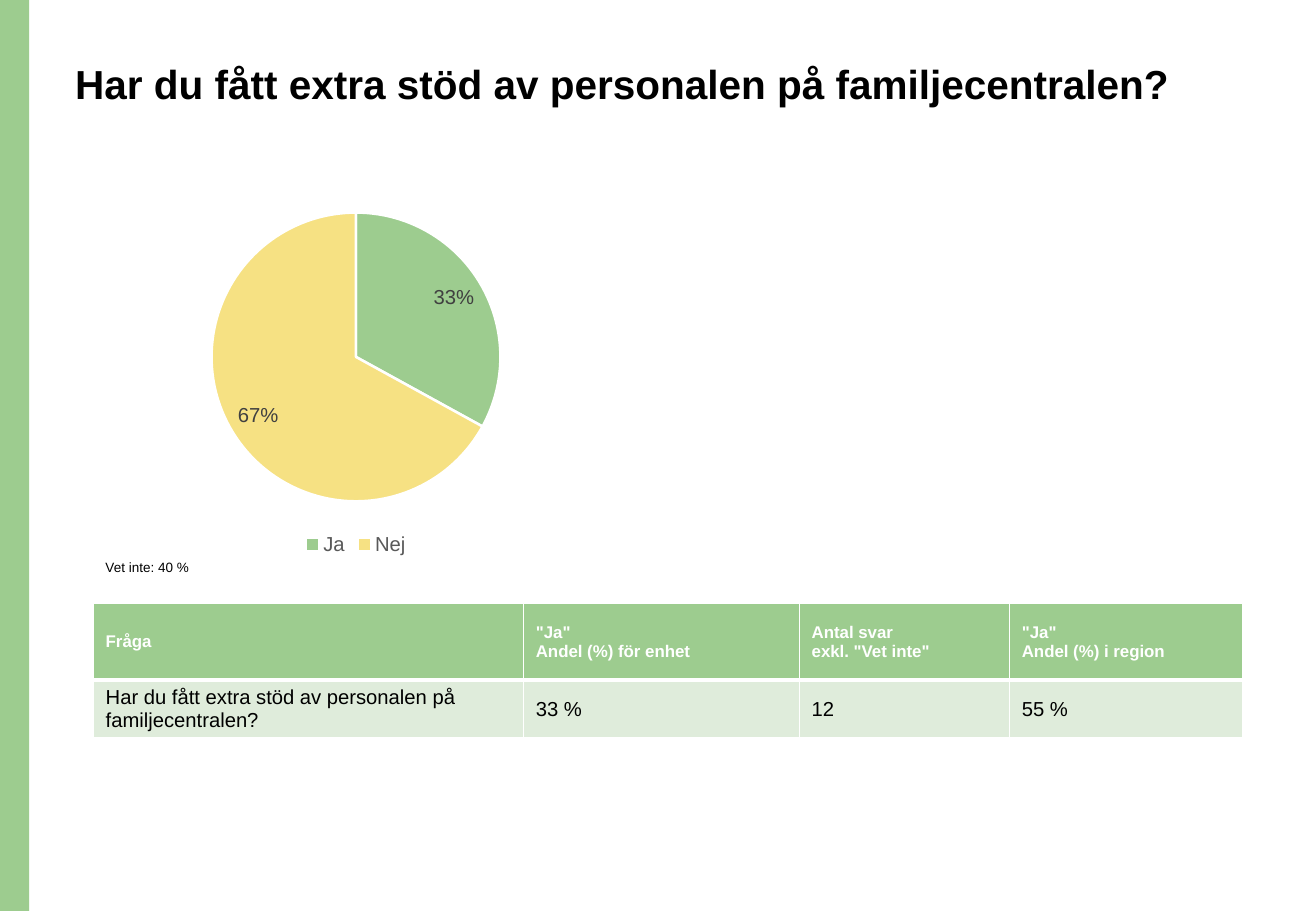
from dataclasses import dataclass

from lxml.etree import SubElement
from pptx import Presentation
from pptx.chart.data import CategoryChartData
from pptx.dml.color import RGBColor
from pptx.enum.chart import XL_CHART_TYPE, XL_LABEL_POSITION, XL_LEGEND_POSITION
from pptx.enum.shapes import MSO_SHAPE
from pptx.enum.text import MSO_ANCHOR
from pptx.oxml import parse_xml
from pptx.oxml.ns import nsdecls, qn
from pptx.util import Emu, Pt

SCALE = 9144
FONT = "Arial"
HUES = {
    "green": "9DCC8F",
    "pale": "DFECDB",
    "yellow": "F6E183",
    "white": "FFFFFF",
    "black": "000000",
    "label": "404040",
    "legend": "595959",
}


@dataclass
class Box:
    left: int
    top: int
    width: int
    height: int

    def emu(self) -> list[Emu]:
        return [px(n) for n in (self.left, self.top, self.width, self.height)]


@dataclass
class Note:
    box: Box
    text: str
    size: int
    bold: bool
    space: float


@dataclass
class Row:
    height: int
    cells: list[str]
    fill: str
    hue: str
    size: int
    bold: bool
    edges: dict[str, int]


ASK = "Har du fått extra stöd av personalen på familjecentralen?"
BAR = Box(0, 0, 24, 750)
PIE = Box(122, 160, 342, 301)
GRID = Box(77, 497, 946, 93)
COLS = [354, 227, 173, 192]
SHARES = {"Ja": (0.33, "green"), "Nej": (0.67, "yellow")}
PLOT = {"x": 0.15, "y": 0.05, "w": 0.7, "h": 0.79}
NOTES = [
    Note(Box(52, 48, 934, 102), ASK, 24, True, 0.9),
    Note(Box(77, 449, 210, 48), "Vet inte: 40 %", 8, False, 1.5),
]
ROWS = [
    Row(63, ["Fråga", '"Ja"\nAndel (%) för enhet', 'Antal svar\nexkl. "Vet inte"',
             '"Ja"\nAndel (%) i region'],
        "green", "white", 10, True, {"L": 1, "R": 1, "T": 1, "B": 3}),
    Row(23, [ASK, "33 %", "12", "55 %"],
        "pale", "black", 12, False, {"L": 1, "R": 1, "T": 3, "B": 1}),
]


def px(n: int) -> Emu:
    return Emu(n * SCALE)


def tint(name: str) -> RGBColor:
    return RGBColor.from_string(HUES[name])


def style(font, size: int, hue: str, bold: bool = False) -> None:
    font.name = FONT
    font.size = Pt(size)
    font.bold = bold
    font.color.rgb = tint(hue)


def paint(fill, hue: str) -> None:
    fill.solid()
    fill.fore_color.rgb = tint(hue)


def add_bar(slide) -> None:
    bar = slide.shapes.add_shape(MSO_SHAPE.RECTANGLE, *BAR.emu())
    bar.shadow.inherit = False
    paint(bar.fill, "green")
    bar.line.fill.background()


def add_note(slide, note: Note) -> None:
    frame = slide.shapes.add_textbox(*note.box.emu()).text_frame
    frame.word_wrap = True
    frame.text = note.text
    line = frame.paragraphs[0]
    line.line_spacing = note.space
    style(line.runs[0].font, note.size, "black", note.bold)


def place_plot(chart) -> None:
    area = chart.plots[0]._element.getparent()
    for old in area.findall(qn("c:layout")):
        area.remove(old)
    spots = "".join(f'<c:{key} val="{val}"/>' for key, val in PLOT.items())
    area.insert(0, parse_xml(
        f'<c:layout {nsdecls("c")}><c:manualLayout><c:layoutTarget val="inner"/>'
        f'<c:xMode val="edge"/><c:yMode val="edge"/>{spots}'
        "</c:manualLayout></c:layout>"))


def add_pie(slide) -> None:
    data = CategoryChartData()
    data.categories = list(SHARES)
    data.add_series("Series 1", [val for val, _ in SHARES.values()])
    chart = slide.shapes.add_chart(XL_CHART_TYPE.PIE, *PIE.emu(), data).chart
    style(chart.font, 10, "black")
    chart.has_title = False
    chart.has_legend = True
    chart.legend.position = XL_LEGEND_POSITION.BOTTOM
    chart.legend.include_in_layout = False
    style(chart.legend.font, 12, "legend")
    plot = chart.plots[0]
    plot.vary_by_categories = True
    for i, (_, hue) in enumerate(SHARES.values()):
        part = plot.series[0].points[i].format
        paint(part.fill, hue)
        part.line.color.rgb = tint("white")
        part.line.width = Pt(1.5)
    tags = plot.series[0].data_labels
    tags.show_value = True
    tags.show_percentage = False
    tags.position = XL_LABEL_POSITION.INSIDE_END
    tags.number_format = '[<0.01]"";[>0.01]0%'
    tags.number_format_is_linked = False
    style(tags.font, 12, "label")
    place_plot(chart)


def add_edges(cell, edges: dict[str, int]) -> None:
    props = cell._tc.get_or_add_tcPr()
    for i, (side, width) in enumerate(edges.items()):
        line = SubElement(props, qn(f"a:ln{side}"), w=str(Pt(width)))
        fill = SubElement(line, qn("a:solidFill"))
        SubElement(fill, qn("a:srgbClr"), val=HUES["white"])
        props.insert(i, line)


def add_grid(slide) -> None:
    table = slide.shapes.add_table(len(ROWS), len(COLS), *GRID.emu()).table
    for col, width in zip(table.columns, COLS):
        col.width = px(width)
    for r, row in enumerate(ROWS):
        table.rows[r].height = px(row.height)
        for c, text in enumerate(row.cells):
            cell = table.cell(r, c)
            cell.text_frame.text = text
            cell.vertical_anchor = MSO_ANCHOR.MIDDLE
            paint(cell.fill, row.fill)
            add_edges(cell, row.edges)
            for line in cell.text_frame.paragraphs:
                style(line.runs[0].font, row.size, row.hue, row.bold)


def main() -> None:
    deck = Presentation()
    deck.slide_width, deck.slide_height = px(1083), px(750)
    slide = deck.slides.add_slide(deck.slide_layouts[6])
    add_bar(slide)
    add_pie(slide)
    add_grid(slide)
    for note in NOTES:
        add_note(slide, note)
    deck.save("out.pptx")


if __name__ == "__main__":
    main()
